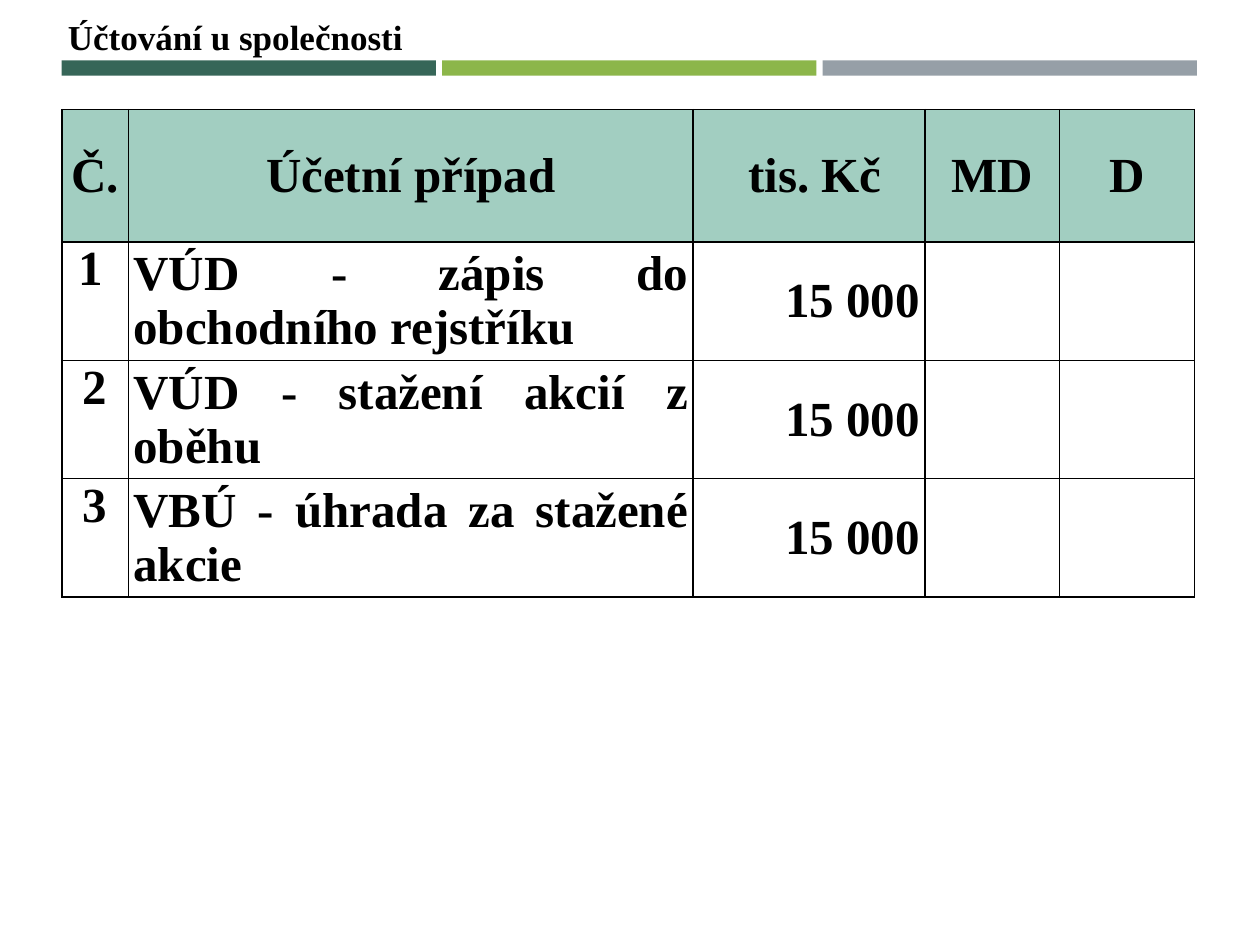
from lxml.etree import SubElement as Sub
from pptx import Presentation
from pptx.dml.color import RGBColor as Rgb
from pptx.enum.shapes import MSO_SHAPE as Kind
from pptx.enum.text import MSO_ANCHOR as Anchor, PP_ALIGN as Align
from pptx.oxml.ns import qn
from pptx.util import Inches, Pt


def paint(fill, tint):
    fill.solid()
    fill.fore_color.rgb = Rgb.from_string(tint)


def write(para, text, size):
    run = para.add_run()
    run.text = text
    look = {"name": "Times New Roman", "size": Pt(size), "bold": True}
    for key, val in look.items():
        setattr(run.font, key, val)
    paint(run.font.fill, "000000")


deck = Presentation()
deck.slide_width, deck.slide_height = Inches(10), Inches(7.5)
page = deck.slides.add_slide(deck.slide_layouts[6])
left = 0.49

for col, tint in enumerate(["366658", "8CB64A", "969FA7"]):
    bar = page.shapes.add_shape(
        Kind.RECTANGLE, Inches(left + col * 3.02), Inches(0.48), Inches(2.97), Inches(0.12)
    )
    bar.shadow.inherit = False
    bar.line.fill.background()
    paint(bar.fill, tint)

title = page.shapes.add_textbox(Inches(0.44), Inches(0.07), Inches(2.88), Inches(0.44))
title.text_frame.word_wrap = False
write(title.text_frame.paragraphs[0], "Účtování u společnosti", 20)

rows = [
    ["Č.", "Účetní případ", " tis. Kč", "MD", "D"],
    [" 1", "VÚD - zápis do obchodního rejstříku", "15 000", "", ""],
    ["2", "VÚD - stažení akcií z oběhu", "15 000", "", ""],
    ["3", "VBÚ - úhrada za stažené akcie", "15 000", "", ""],
]
wide = [0.53, 4.48, 1.84, 1.07, 1.07]
high = [1.05] + [0.94] * 3
sides = [Align.CENTER, Align.JUSTIFY, Align.RIGHT, Align.CENTER, Align.CENTER]

grid = page.shapes.add_table(
    len(rows), len(wide), Inches(left), Inches(0.87), Inches(sum(wide)), Inches(sum(high))
).table
for col, size in zip(grid.columns, wide):
    col.width = Inches(size)
for row, size in zip(grid.rows, high):
    row.height = Inches(size)

for r, row in enumerate(rows):
    for c, text in enumerate(row):
        cell = grid.cell(r, c)
        form = {
            "margin_left": Inches(0.04),
            "margin_right": Inches(0.04),
            "margin_top": 0,
            "margin_bottom": 0,
            "vertical_anchor": Anchor.TOP if r and c == 0 else Anchor.MIDDLE,
        }
        for key, val in form.items():
            setattr(cell, key, val)
        para = cell.text_frame.paragraphs[0]
        para.alignment = sides[c] if r else Align.CENTER
        if text.strip() == "1":
            para.alignment = Align.LEFT
        if text:
            write(para, text, 28)
        prop = cell._tc.get_or_add_tcPr()
        for edge in ["a:lnL", "a:lnR", "a:lnT", "a:lnB"]:
            line = Sub(prop, qn(edge), w=str(Pt(1)))
            Sub(Sub(line, qn("a:solidFill")), qn("a:srgbClr"), val="000000")
        if r:
            cell.fill.background()
        else:
            paint(cell.fill, "A2CEC1")

deck.save("out.pptx")
